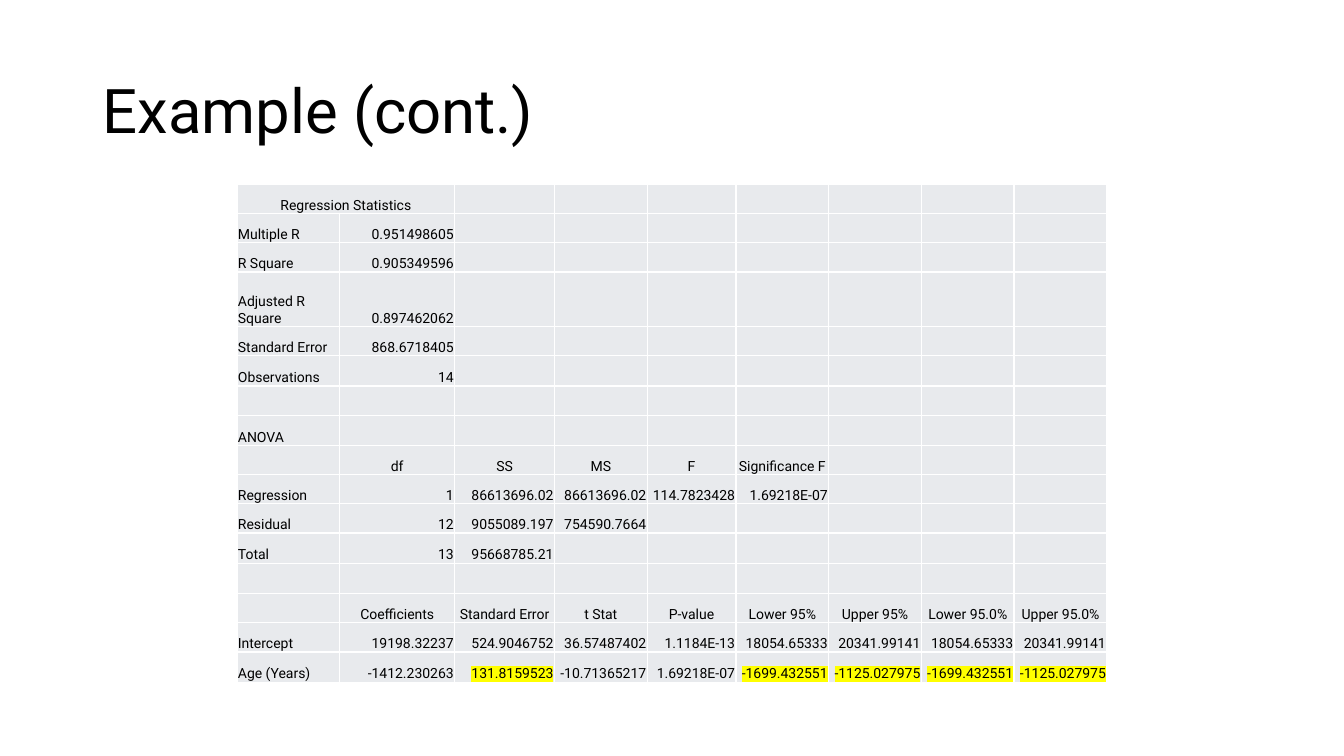
"""Build a slide with a table of regression results."""
from dataclasses import dataclass

from lxml import etree
from pptx import Presentation
from pptx.dml.color import RGBColor
from pptx.enum.text import MSO_ANCHOR, PP_ALIGN
from pptx.oxml.ns import qn
from pptx.slide import Slide
from pptx.table import Table, _Cell
from pptx.text.text import _Run
from pptx.util import Inches, Pt

LEFT, MID, RIGHT = PP_ALIGN.LEFT, PP_ALIGN.CENTER, PP_ALIGN.RIGHT
LOW, HALF = MSO_ANCHOR.BOTTOM, MSO_ANCHOR.MIDDLE
BLACK = RGBColor(0x00, 0x00, 0x00)
WHITE = RGBColor(0xFF, 0xFF, 0xFF)
GREY = RGBColor(0xE8, 0xEA, 0xED)
YELLOW = RGBColor(0xFF, 0xFF, 0x00)
FACE = "Roboto"
SIZE = 10


@dataclass(frozen=True)
class Row:
    texts: tuple[str, ...] = ()
    high: float = 0.29
    head: bool = False
    marks: tuple[int, ...] = ()


WIDTHS = (1.02, 1.14, 0.99, 0.92, 0.88, 0.92, 0.92, 0.92, 0.92)
ROWS = (
    Row(("Regression Statistics",), head=True),
    Row(("Multiple R", "0.951498605")),
    Row(("R Square", "0.905349596")),
    Row(("Adjusted R Square", "0.897462062"), 0.54),
    Row(("Standard Error", "868.6718405")),
    Row(("Observations", "14"), 0.3),
    Row(),
    Row(("ANOVA",), 0.3),
    Row(("", "df", "SS", "MS", "F", "Significance F"), head=True),
    Row(("Regression", "1", "86613696.02", "86613696.02", "114.7823428",
         "1.69218E-07")),
    Row(("Residual", "12", "9055089.197", "754590.7664")),
    Row(("Total", "13", "95668785.21"), 0.3),
    Row(high=0.3),
    Row(("", "Coefficients", "Standard Error", "t Stat", "P-value",
         "Lower 95%", "Upper 95%", "Lower 95.0%", "Upper 95.0%"), head=True),
    Row(("Intercept", "19198.32237", "524.9046752", "36.57487402",
         "1.1184E-13", "18054.65333", "20341.99141", "18054.65333",
         "20341.99141")),
    Row(("Age (Years)", "-1412.230263", "131.8159523", "-10.71365217",
         "1.69218E-07", "-1699.432551", "-1125.027975", "-1699.432551",
         "-1125.027975"), 0.3, marks=(2, 5, 6, 7, 8)),
)


def style(run: _Run, size: int) -> None:
    run.font.size = Pt(size)
    run.font.name = FACE
    run.font.color.rgb = BLACK


def mark(run: _Run) -> None:
    light = etree.Element(qn("a:highlight"))
    etree.SubElement(light, qn("a:srgbClr"), val=str(YELLOW))
    run.font._element.find(qn("a:solidFill")).addnext(light)


def edge(cell: _Cell) -> None:
    props = cell._tc.get_or_add_tcPr()
    for spot, side in enumerate(("lnL", "lnR", "lnT", "lnB")):
        line = etree.Element(qn(f"a:{side}"), w=str(Pt(1)))
        fill = etree.SubElement(line, qn("a:solidFill"))
        etree.SubElement(fill, qn("a:srgbClr"), val=str(WHITE))
        props.insert(spot, line)


def write(cell: _Cell, text: str, align: PP_ALIGN, bright: bool) -> None:
    cell.fill.solid()
    cell.fill.fore_color.rgb = GREY
    edge(cell)
    cell.vertical_anchor = LOW
    cell.margin_left = cell.margin_right = cell.margin_top = Inches(0.01)
    cell.margin_bottom = 0
    para = cell.text_frame.paragraphs[0]
    if not text:
        etree.SubElement(para._p, qn("a:endParaRPr"), sz=str(SIZE * 100))
        return
    para.text = text
    para.alignment = align
    style(para.runs[0], SIZE)
    if bright:
        mark(para.runs[0])


def fill_row(table: Table, index: int, row: Row) -> None:
    table.rows[index].height = Inches(row.high)
    for col in range(len(WIDTHS)):
        text = row.texts[col] if col < len(row.texts) else ""
        align = MID if row.head else RIGHT if col else LEFT
        write(table.cell(index, col), text, align, col in row.marks)


def add_title(slide: Slide) -> None:
    box = slide.shapes.add_textbox(
        Inches(0.92), Inches(0.4), Inches(11.5), Inches(1.45))
    frame = box.text_frame
    frame.word_wrap = True
    frame.vertical_anchor = HALF
    frame.text = "Example (cont.)"
    frame.paragraphs[0].line_spacing = 0.9
    style(frame.paragraphs[0].runs[0], 44)


def add_grid(slide: Slide) -> None:
    table = slide.shapes.add_table(
        len(ROWS), len(WIDTHS), Inches(2.35), Inches(1.83),
        Inches(sum(WIDTHS)), Inches(sum(row.high for row in ROWS))).table
    table.first_row = table.horz_banding = False
    for col, width in zip(table.columns, WIDTHS):
        col.width = Inches(width)
    for index, row in enumerate(ROWS):
        fill_row(table, index, row)
    table.cell(0, 0).merge(table.cell(0, 1))


def main() -> None:
    deck = Presentation()
    deck.slide_width, deck.slide_height = Inches(13.33), Inches(7.5)
    slide = deck.slides.add_slide(deck.slide_layouts[6])
    add_title(slide)
    add_grid(slide)
    deck.save("out.pptx")


if __name__ == "__main__":
    main()
